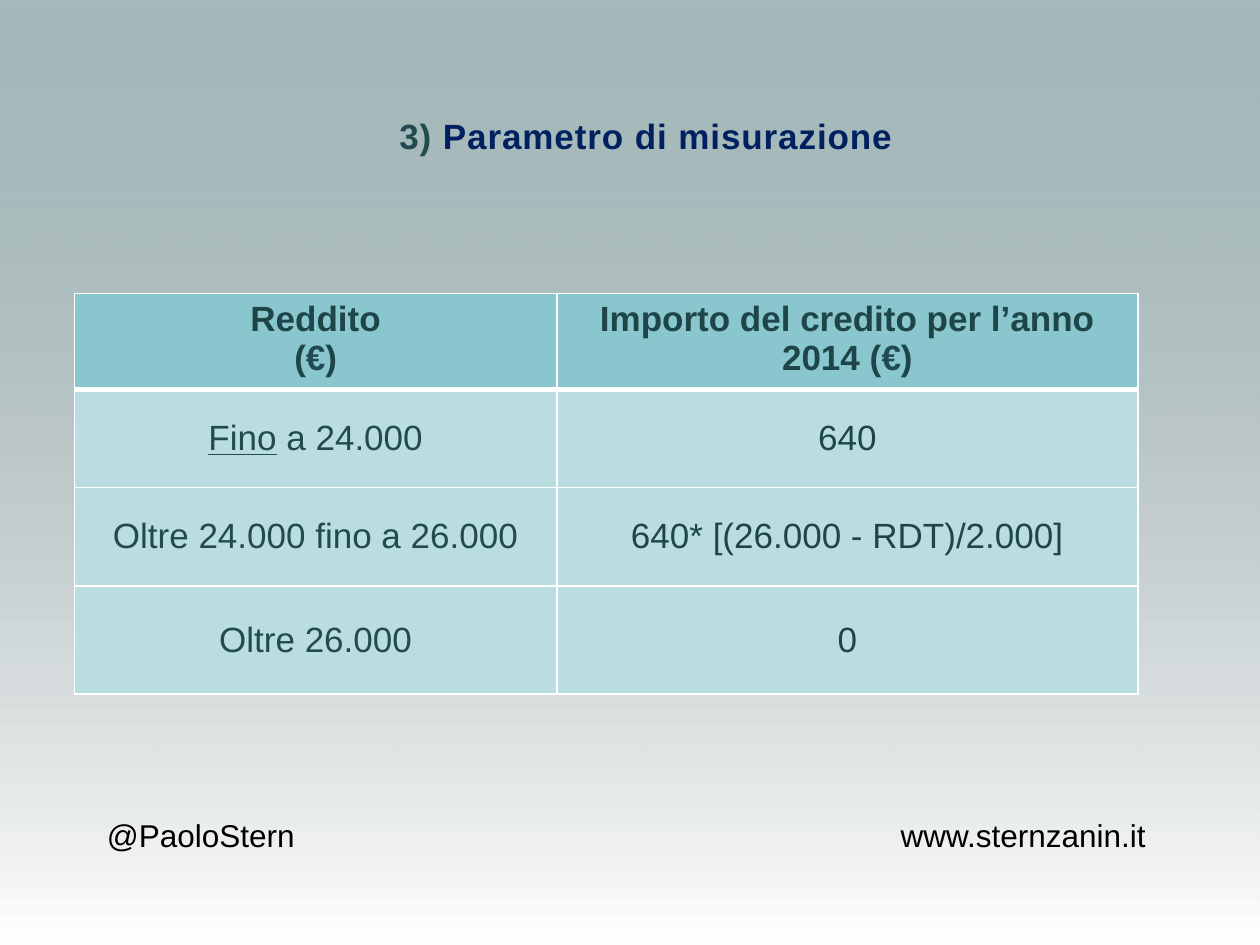
from lxml.etree import SubElement
from pptx import Presentation
from pptx.dml.color import RGBColor
from pptx.enum.shapes import MSO_SHAPE
from pptx.enum.text import MSO_ANCHOR, PP_ALIGN
from pptx.oxml.ns import qn
from pptx.util import Inches, Pt

FONT = "Arial"
TEAL, DARK_TEAL, NAVY = "224B50", "1E4649", "002060"
HEADER_FILL, BODY_FILL = "8AC6CD", "BADDE1"
COLUMN_WIDTHS = (3.83, 4.61)
ROW_HEIGHTS = (0.76, 0.78, 0.78, 0.86)
EURO = [("(", DARK_TEAL), ("€", TEAL), (")", DARK_TEAL)]

# Each cell is a list of paragraphs, each paragraph a list of (text, colour).
TABLE_ROWS = [
    ([[("Reddito", DARK_TEAL)], EURO],
     [[("Importo del credito per l’anno 2014 ", DARK_TEAL), *EURO]]),
    ([[("Fino", TEAL), (" a 24.000", TEAL)]], [[("640", DARK_TEAL)]]),
    ([[("Oltre 24.000 fino a 26.000", TEAL)]],
     [[("640* [(26.000 - RDT)/2.000]", DARK_TEAL)]]),
    ([[("Oltre 26.000", TEAL)]], [[("0", DARK_TEAL)]]),
]


def color(value):
    return RGBColor.from_string(value)


def inches(*lengths):
    return [Inches(length) for length in lengths]


def write_paragraph(paragraph, runs, size, bold=False, align=PP_ALIGN.LEFT):
    paragraph.alignment = align
    for text, run_color in runs:
        run = paragraph.add_run()
        run.text = text
        run.font.color.rgb = color(run_color)
    font = paragraph.font
    font.name, font.size, font.bold = FONT, Pt(size), bold


def add_background(slide, width, height):
    """Tint the slide, then veil it from translucent grey down to white."""
    slide.background.fill.solid()
    slide.background.fill.fore_color.rgb = color("BBE0E3")
    veil = slide.shapes.add_shape(MSO_SHAPE.RECTANGLE, 0, 0, width, height)
    veil.shadow.inherit = False
    veil.line.fill.background()
    veil.fill.gradient()
    veil.fill.gradient_angle = 270
    for stop, stop_color in zip(veil.fill.gradient_stops, ("808080", "FFFFFF")):
        stop.color.rgb = color(stop_color)
    grey = next(veil._element.spPr.iter(qn("a:srgbClr")))
    SubElement(grey, qn("a:alpha"), val="40000")


def add_title(slide, box):
    title = slide.shapes.title
    title.left, title.top, title.width, title.height = inches(*box)
    frame = title.text_frame
    frame.word_wrap = True
    frame.vertical_anchor = MSO_ANCHOR.TOP
    frame.margin_left = Inches(0.35)
    paragraph = frame.paragraphs[0]
    write_paragraph(paragraph, [("3) ", TEAL), ("Parametro di misurazione", NAVY)],
                    20, True, PP_ALIGN.CENTER)
    for run in paragraph.runs:
        run.font._element.set("spc", "50")


def add_contact(slide, text, box):
    frame = slide.shapes.add_textbox(*inches(*box)).text_frame
    frame.word_wrap = True
    write_paragraph(frame.paragraphs[0], [(text, "000000")], 18)


def set_borders(cell, widths):
    properties = cell._tc.get_or_add_tcPr()
    for side, width in zip("LRTB", widths):
        line = SubElement(properties, qn(f"a:ln{side}"), w=str(Pt(width)))
        SubElement(SubElement(line, qn("a:solidFill")), qn("a:srgbClr"), val="FFFFFF")


def fill_cell(cell, paragraphs, row):
    header = row == 0
    set_borders(cell, (1, 1, 3 if row == 1 else 1, 3 if header else 1))
    cell.fill.solid()
    cell.fill.fore_color.rgb = color(HEADER_FILL if header else BODY_FILL)
    cell.vertical_anchor = MSO_ANCHOR.TOP if header else MSO_ANCHOR.MIDDLE
    frame = cell.text_frame
    for index, runs in enumerate(paragraphs):
        paragraph = frame.add_paragraph() if index else frame.paragraphs[0]
        write_paragraph(paragraph, runs, 20, header, PP_ALIGN.CENTER)


def add_credit_table(slide, left, top):
    box = inches(left, top, sum(COLUMN_WIDTHS), sum(ROW_HEIGHTS))
    table = slide.shapes.add_table(len(ROW_HEIGHTS), len(COLUMN_WIDTHS), *box).table
    for column, width in zip(table.columns, COLUMN_WIDTHS):
        column.width = Inches(width)
    for row, (height, cells) in enumerate(zip(ROW_HEIGHTS, TABLE_ROWS)):
        table.rows[row].height = Inches(height)
        for column, paragraphs in enumerate(cells):
            fill_cell(table.cell(row, column), paragraphs, row)
    table.cell(1, 0).text_frame.paragraphs[0].runs[0].font.underline = True


def main():
    presentation = Presentation()
    presentation.slide_width, presentation.slide_height = inches(10, 7.5)
    slide = presentation.slides.add_slide(presentation.slide_layouts[5])
    add_background(slide, presentation.slide_width, presentation.slide_height)
    # The title placeholder exists already, so move it in front of the veil.
    slide.shapes._spTree.append(slide.shapes.title._element)
    add_title(slide, (0, 0.86, 10, 0.44))
    add_credit_table(slide, 0.59, 2.33)
    add_contact(slide, "@PaoloStern", (0.75, 6.43, 1.81, 0.4))
    add_contact(slide, "www.sternzanin.it", (7.05, 6.43, 2.44, 0.4))
    presentation.save("out.pptx")


if __name__ == "__main__":
    main()
